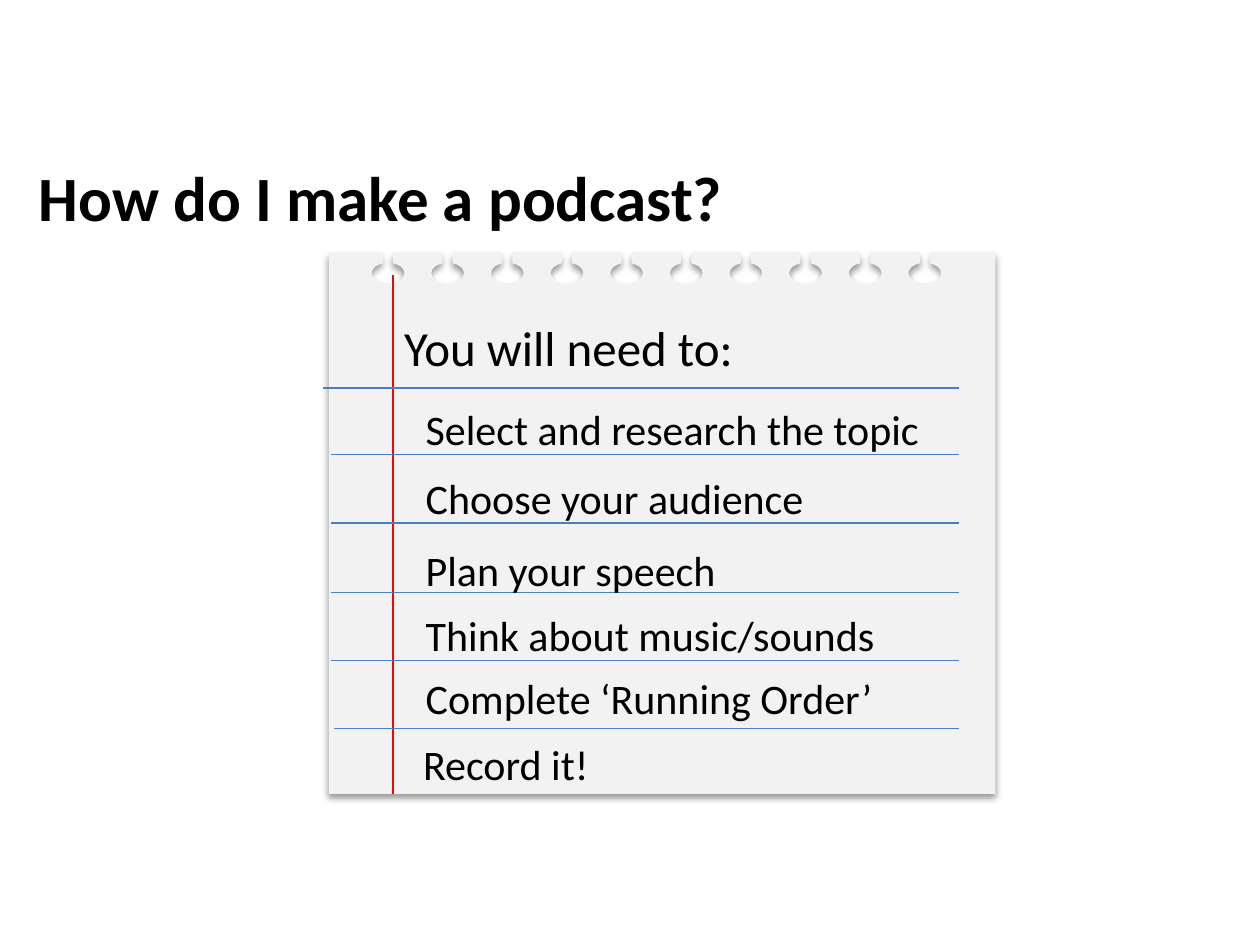
import pptx
import pptx.dml.color
import pptx.enum.shapes
import pptx.enum.text
import pptx.oxml
import pptx.oxml.ns
import pptx.util
from lxml import etree
from pptx.oxml.ns import qn
from pptx.util import Inches

BLACK = pptx.dml.color.RGBColor(0x00, 0x00, 0x00)
PAPER = pptx.dml.color.RGBColor(0xF2, 0xF2, 0xF2)
RED = pptx.dml.color.RGBColor(0xFF, 0x00, 0x00)
BLUE = pptx.dml.color.RGBColor(0x4B, 0x7E, 0xBC)

PAPER_SHADOW = (
    f'<a:effectLst {pptx.oxml.ns.nsdecls("a")}>'
    '<a:outerShdw blurRad="50800" dist="38100" dir="5400000" algn="t" rotWithShape="0">'
    '<a:srgbClr val="000000"><a:alpha val="40000"/></a:srgbClr>'
    '</a:outerShdw></a:effectLst>'
)
NO_SHADOW = f'<a:effectLst {pptx.oxml.ns.nsdecls("a")}/>'

# Outline of one punched hole, from its center line and the paper's top:
# each entry is an end point, preceded by two control points for a curve.
HOLE = [
    [(-0.04, 0)],
    [(-0.04, 0.09)],
    [(-0.09, 0.1), (-0.13, 0.13), (-0.13, 0.17)],
    [(-0.13, 0.21), (-0.07, 0.25), (0, 0.25)],
    [(0.07, 0.25), (0.13, 0.21), (0.13, 0.17)],
    [(0.13, 0.13), (0.09, 0.1), (0.04, 0.09)],
    [(0.04, 0)],
]


class NotepadSlide:
    font_name = "Calibri"

    def __init__(self, presentation):
        self.slide = presentation.slides.add_slide(presentation.slide_layouts[6])

    def paper(self, left, top, right, bottom, hole_centers):
        segments = [[(center + x, top + y) for x, y in segment]
                    for center in hole_centers for segment in HOLE]
        segments += [[(right, top)], [(right, bottom)], [(left, bottom)]]
        builder = self.slide.shapes.build_freeform(Inches(left), Inches(top))
        builder.add_line_segments(
            [(Inches(x), Inches(y)) for x, y in (segment[-1] for segment in segments)])
        shape = builder.convert_to_shape()

        # Bend the straight segments that have control points
        lines = list(shape._element.iter(qn("a:lnTo")))
        for line, segment in zip(lines, segments):
            if len(segment) == 1:
                continue
            curve = etree.Element(qn("a:cubicBezTo"))
            for x, y in segment[:-1]:
                etree.SubElement(curve, qn("a:pt"), x=str(Inches(x - left)),
                                 y=str(Inches(y - top)))
            curve.append(line[0])
            line.getparent().replace(line, curve)

        shape.fill.solid()
        shape.fill.fore_color.rgb = PAPER
        shape.line.fill.background()
        shape._element.spPr.append(pptx.oxml.parse_xml(PAPER_SHADOW))

    def line(self, start_x, start_y, end_x, end_y, color):
        connector = self.slide.shapes.add_connector(
            pptx.enum.shapes.MSO_CONNECTOR.STRAIGHT,
            Inches(start_x), Inches(start_y), Inches(end_x), Inches(end_y))
        connector.line.color.rgb = color
        connector.line.width = pptx.util.Pt(0.75)
        connector._element.spPr.append(pptx.oxml.parse_xml(NO_SHADOW))

    def text(self, content, left, top, width, height, size, title=False):
        box = self.slide.shapes.add_textbox(
            Inches(left), Inches(top), Inches(width), Inches(height))
        frame = box.text_frame
        frame.word_wrap = True
        paragraph = frame.paragraphs[0]
        if title:
            frame.vertical_anchor = pptx.enum.text.MSO_ANCHOR.MIDDLE
            paragraph.line_spacing = 0.9
        else:
            frame.auto_size = pptx.enum.text.MSO_AUTO_SIZE.SHAPE_TO_FIT_TEXT
        run = paragraph.add_run()
        run.text = content
        run.font.name = self.font_name
        run.font.size = pptx.util.Pt(size)
        run.font.bold = title
        run.font.color.rgb = BLACK


def main():
    presentation = pptx.Presentation()
    presentation.slide_width = Inches(10)
    presentation.slide_height = Inches(7.5)
    notepad = NotepadSlide(presentation)

    # Punched paper sheet
    notepad.paper(2.61, 2, 7.9, 6.3, [3.08 + 4.26 / 9 * i for i in range(10)])

    # Red margin and blue ruling
    notepad.line(3.12, 2.18, 3.12, 6.3, RED)
    for left, y in [(2.56, 3.08), (2.63, 3.61), (2.63, 4.15),
                    (2.63, 4.7), (2.63, 5.24), (2.65, 5.78)]:
        notepad.line(left, y, 7.61, y, BLUE)

    # Title and heading
    notepad.text("How do I make a podcast?", 0.21, 1.2, 7.4, 0.79, 36, title=True)
    notepad.text("You will need to:", 3.11, 2.47, 4.78, 0.57, 28)

    # Steps
    steps = [
        ("Select and research the topic", 3.28, 3.15, 4.78),
        ("Choose your audience", 3.28, 3.7, 3.56),
        ("Plan your speech", 3.28, 4.27, 3.56),
        ("Think about music/sounds", 3.28, 4.79, 3.83),
        ("Complete ‘Running Order’", 3.28, 5.29, 3.98),
        ("Record it!", 3.26, 5.81, 3.98),
    ]
    for content, left, top, width in steps:
        notepad.text(content, left, top, width, 0.5, 24)

    presentation.save("out.pptx")


if __name__ == "__main__":
    main()
